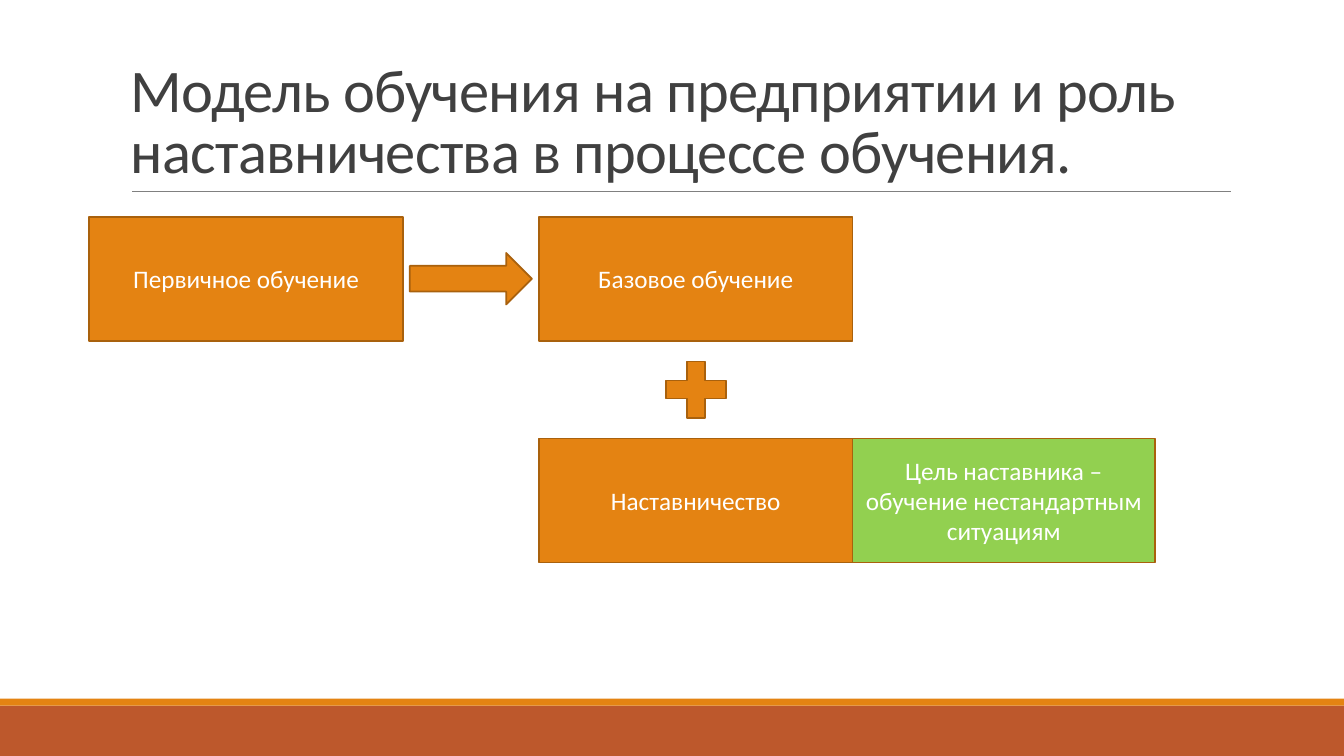
from dataclasses import dataclass

from pptx import Presentation
from pptx import util as u
from pptx.dml import color
from pptx.enum import shapes, text
from pptx.oxml import ns, xmlchemy

Pt = u.Pt
SHAPE = shapes.MSO_SHAPE


@dataclass(frozen=True)
class Theme:
    font: str = "Calibri"
    title_size: float = 43.2
    body_size: float = 18
    title: str = "404040"
    body: str = "FFFFFF"
    rule: str = "808080"
    accent: str = "E48312"
    outline: str = "A9610D"
    goal: str = "92D050"
    band: str = "BD582C"


T = Theme()
WIDTH, HEIGHT = 960, 540


def rgb(value):
    return color.RGBColor.from_string(value)


def style_run(r, size, ink):
    r.font.name = T.font
    r.font.size = Pt(size)
    r.font.color.rgb = rgb(ink)


def add_block(s, kind, box, fill, outline=None, label=None):
    sp = s.shapes.add_shape(kind, *map(Pt, box))
    sp.shadow.inherit = False
    sp.fill.solid()
    sp.fill.fore_color.rgb = rgb(fill)
    if outline:
        sp.line.color.rgb = rgb(outline)
        sp.line.width = Pt(1.25)
    else:
        sp.line.fill.background()
    if label:
        tf = sp.text_frame
        tf.word_wrap = True
        tf.vertical_anchor = text.MSO_ANCHOR.MIDDLE
        tf.text = label
        p = tf.paragraphs[0]
        p.alignment = text.PP_ALIGN.CENTER
        style_run(p.runs[0], T.body_size, T.body)


def add_footer(s, box):
    # Thin accent stripe on top of the wide band
    left, top, width, height = box
    stripe = 5
    add_block(s, SHAPE.RECTANGLE, (left, top + stripe, width, height - stripe), T.band)
    add_block(s, SHAPE.RECTANGLE, (left, top, width, stripe), T.accent)


def add_title(s, box, title):
    left, top, width, height = box
    bottom = top + height

    # Rule under the heading
    rule = s.shapes.add_connector(
        shapes.MSO_CONNECTOR.STRAIGHT,
        Pt(left + 8), Pt(bottom), Pt(left + width + 0.8), Pt(bottom))
    rule.line.color.rgb = rgb(T.rule)
    rule.line.width = Pt(0.5)
    rule._element.spPr.append(xmlchemy.OxmlElement("a:effectLst"))

    # Heading
    tf = s.shapes.add_textbox(*map(Pt, box)).text_frame
    tf.word_wrap = True
    tf.vertical_anchor = text.MSO_ANCHOR.BOTTOM
    tf.text = title
    p = tf.paragraphs[0]
    p.line_spacing = 0.85
    r = p.runs[0]
    style_run(r, T.title_size, T.title)
    r._r.get_or_add_rPr().set("spc", "-50")


def add_model(s, box):
    left, top, width, height = box
    block_w, block_h, goal_w = 224, 88.6, 216
    arrow_w, arrow_h = 87.2, 36.8
    plus_w, plus_h = 58.4, 54.8
    goal_x = left + width - goal_w
    main_x = goal_x - block_w
    lower_y = top + height - block_h

    # Training steps
    steps = [
        (left, top, block_w, T.accent, "Первичное обучение"),
        (main_x, top, block_w, T.accent, "Базовое обучение"),
        (main_x, lower_y, block_w, T.accent, "Наставничество"),
        (goal_x, lower_y, goal_w, T.goal,
         "Цель наставника – обучение нестандартным ситуациям"),
    ]
    for x, y, w, fill, label in steps:
        add_block(s, SHAPE.RECTANGLE, (x, y, w, block_h), fill, T.outline, label)

    # Signs centred in the gaps between steps
    arrow_x = (left + block_w + main_x - arrow_w) / 2
    arrow_y = top + (block_h - arrow_h) / 2
    add_block(s, SHAPE.RIGHT_ARROW, (arrow_x, arrow_y, arrow_w, arrow_h),
              T.accent, T.outline)
    plus_x = main_x + (block_w - plus_w) / 2
    plus_y = (top + block_h + lower_y - plus_h) / 2
    add_block(s, SHAPE.MATH_PLUS, (plus_x, plus_y, plus_w, plus_h),
              T.accent, T.outline)


def main():
    prs = Presentation()
    prs.slide_width, prs.slide_height = Pt(WIDTH), Pt(HEIGHT)
    s = prs.slides.add_slide(prs.slide_layouts[6])
    add_footer(s, (0, 499, WIDTH, 41))
    add_title(s, (86.4, 22.3, 792, 114.3),
              "Модель обучения на предприятии и роль наставничества в процессе обучения.")
    add_model(s, (63.8, 154.8, 761.2, 247))
    prs.save("out.pptx")


if __name__ == "__main__":
    main()
